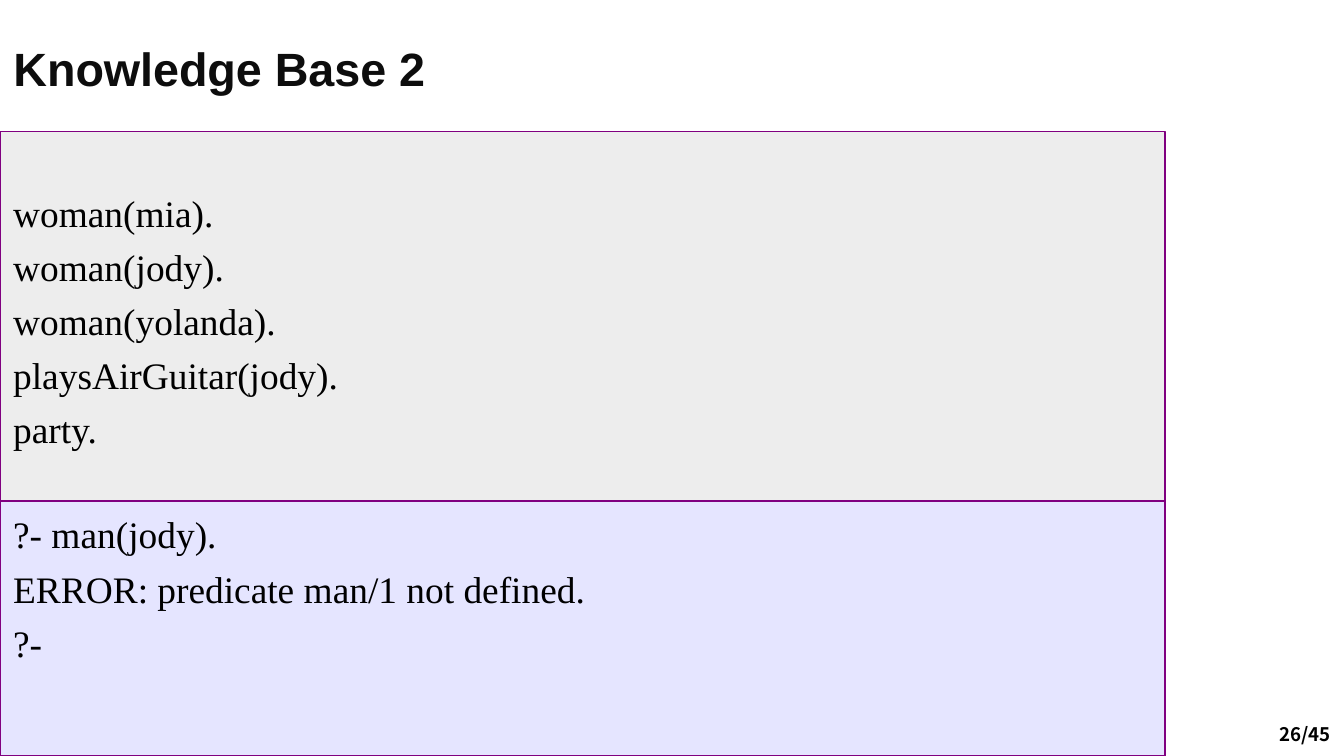
from lxml import etree
from pptx import Presentation
from pptx.dml.color import RGBColor
from pptx.enum import shapes, text
from pptx.oxml import ns
from pptx.util import Cm, Pt

COLORS = {"ink": "000000", "title": "0D0D0D", "edge": "800080",
          "facts": "DDDDDD", "query": "CCCCFF"}
WIDTH, HEIGHT = 25.4, 14.29
BOX_WIDTH, SPLIT = 22.02, 9.47
TOP = 2.49

FACTS = ["woman(mia).", "woman(jody).", "woman(yolanda).",
         "playsAirGuitar(jody).", "party."]
QUERY = ["?- man(jody).", "ERROR: predicate man/1 not defined.", "?-"]


def color(name):
    return RGBColor.from_string(COLORS[name])


def write(frame, lines, font="Times New Roman", size=20, ink="ink",
          bold=False, gap=0, spacing=None, anchor=text.MSO_ANCHOR.TOP):
    frame.auto_size = text.MSO_AUTO_SIZE.NONE
    frame.vertical_anchor = anchor
    for i, line in enumerate(lines):
        par = frame.paragraphs[0] if i == 0 else frame.add_paragraph()
        par.alignment = text.PP_ALIGN.LEFT
        par.space_before = Pt(gap if i else 0)
        if spacing:
            par.line_spacing = spacing
        run = par.add_run()
        run.text = line
        run.font.name, run.font.size, run.font.bold = font, Pt(size), bold
        run.font.color.rgb = color(ink)


class Deck:
    def __init__(self):
        self.show = Presentation()
        self.show.slide_width, self.show.slide_height = Cm(WIDTH), Cm(HEIGHT)
        self.slide = self.show.slides.add_slide(self.show.slide_layouts[5])

    def title(self, words):
        head = self.slide.shapes.title
        head.left, head.top = Cm(0), Cm(0)
        head.width, head.height = Cm(WIDTH), Cm(2.46)
        write(head.text_frame, [words], font="Arial", size=25, ink="title",
              bold=True, spacing=1.1, anchor=text.MSO_ANCHOR.MIDDLE)

    def page(self, words):
        box = self.slide.shapes.add_textbox(Cm(23.93), Cm(13.54), Cm(1.47), Cm(0.79))
        box.text_frame.word_wrap = True
        write(box.text_frame, [words], font="Noto Sans CJK KR", size=10, bold=True)

    def code(self, lines, top, bottom, fill, inset, anchor):
        """Draw a half-transparent panel of code lines."""
        box = self.slide.shapes.add_shape(
            shapes.MSO_SHAPE.RECTANGLE, Cm(0), Cm(top), Cm(BOX_WIDTH), Cm(bottom - top))
        box.shadow.inherit = False
        box.fill.solid()
        box.fill.fore_color.rgb = color(fill)
        tint = box.fill._xPr.find(".//" + ns.qn("a:srgbClr"))
        etree.SubElement(tint, ns.qn("a:alpha"), val="50000")
        box.line.color.rgb = color("edge")
        box.line.width = Pt(0.75)
        box.text_frame.word_wrap = True
        box.text_frame.margin_top = Cm(inset)
        write(box.text_frame, lines, gap=5, anchor=anchor)


def main():
    deck = Deck()
    deck.title("Knowledge Base 2")
    deck.page("26/45")
    deck.code(FACTS, TOP, SPLIT, "facts", 0.28, text.MSO_ANCHOR.MIDDLE)
    deck.code(QUERY, SPLIT, HEIGHT, "query", 0.2, text.MSO_ANCHOR.TOP)
    deck.show.save("out.pptx")


if __name__ == "__main__":
    main()
